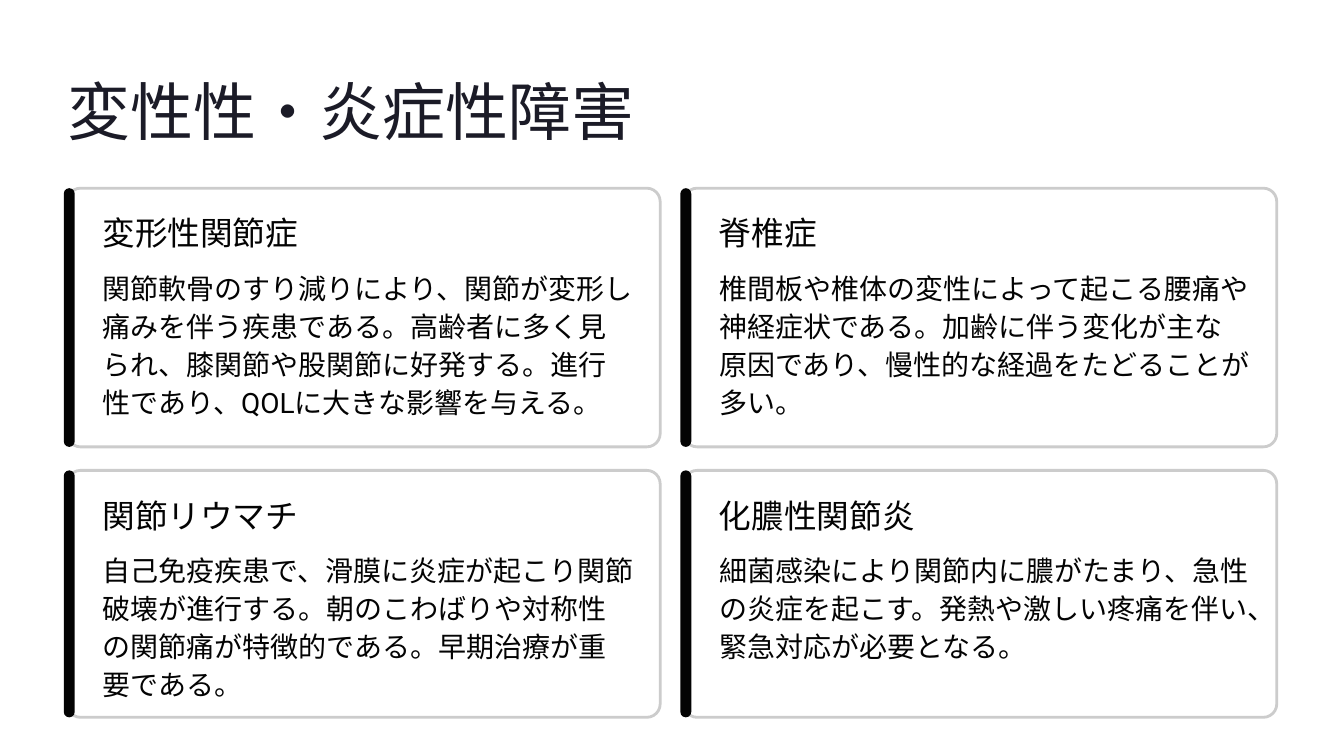
import pptx
import pptx.dml.color
import pptx.enum.shapes
import pptx.enum.text
import pptx.oxml.ns
import pptx.util
from lxml import etree

SHAPE = pptx.enum.shapes.MSO_SHAPE
PX = 9144  # EMU per px, 100 px to the inch
INK = "030303"

DISORDERS = [
    ("変形性関節症",
     "関節軟骨のすり減りにより、関節が変形し痛みを伴う疾患である。高齢者に多く見られ、"
     "膝関節や股関節に好発する。進行性であり、QOLに大きな影響を与える。"),
    ("脊椎症",
     "椎間板や椎体の変性によって起こる腰痛や神経症状である。加齢に伴う変化が主な原因であり、"
     "慢性的な経過をたどることが多い。"),
    ("関節リウマチ",
     "自己免疫疾患で、滑膜に炎症が起こり関節破壊が進行する。朝のこわばりや対称性の関節痛が"
     "特徴的である。早期治療が重要である。"),
    ("化膿性関節炎",
     "細菌感染により関節内に膿がたまり、急性の炎症を起こす。発熱や激しい疼痛を伴い、"
     "緊急対応が必要となる。"),
]
COLUMN_LEFTS = (80, 814)
ROWS = ((224, 308), (560, 294))  # top and height
CARD_WIDTH = 706


def rgb(hex_colour):
    return pptx.dml.color.RGBColor.from_string(hex_colour)


def px(*lengths):
    return [pptx.util.Emu(length * PX) for length in lengths]


class DisorderSlide:
    def __init__(self, deck):
        self.slide = deck.slides.add_slide(deck.slide_layouts[5])

    def set_text(self, frame, words, font, size, leading, colour=INK):
        """Fill a text frame with one left-aligned paragraph."""
        frame.margin_left = frame.margin_right = 0
        frame.margin_top = frame.margin_bottom = 0
        frame.word_wrap = True
        frame.auto_size = pptx.enum.text.MSO_AUTO_SIZE.NONE
        frame.vertical_anchor = pptx.enum.text.MSO_ANCHOR.TOP
        frame.text = words
        paragraph = frame.paragraphs[0]
        paragraph.alignment = pptx.enum.text.PP_ALIGN.LEFT
        paragraph.line_spacing = pptx.util.Pt(leading)
        paragraph.font.name = font
        paragraph.font.size = pptx.util.Pt(size)
        paragraph.font.color.rgb = rgb(colour)

    def title(self, words, left, top, width, height):
        heading = self.slide.shapes.title
        heading.left, heading.top, heading.width, heading.height = px(left, top, width, height)
        self.set_text(heading.text_frame, words, "Inter", 54, 64, "1B1B27")

    def text(self, words, left, top, width, height, font, size, leading):
        box = self.slide.shapes.add_textbox(*px(left, top, width, height))
        self.set_text(box.text_frame, words, font, size, leading)

    def rounded(self, left, top, width, height, radius, fill, border=None):
        panel = self.slide.shapes.add_shape(SHAPE.ROUNDED_RECTANGLE, *px(left, top, width, height))
        panel.shadow.inherit = False
        panel.adjustments[0] = min(0.5, radius / min(width, height))
        panel.fill.solid()
        panel.fill.fore_color.rgb = rgb(fill)
        if border:
            panel.line.color.rgb = rgb(border)
            panel.line.width = pptx.util.Pt(2.4)
        else:
            panel.line.fill.background()
        return panel

    def card(self, name, description, left, top, height):
        panel = self.rounded(left, top, CARD_WIDTH, height, 16, "FFFFFF", "CCCCCC")
        fill_colour = panel.element.spPr.find(".//" + pptx.oxml.ns.qn("a:srgbClr"))
        etree.SubElement(fill_colour, pptx.oxml.ns.qn("a:alpha"), val="95000")
        self.rounded(left - 4, top, 13, height, 12, INK)
        self.text(name, left + 42, top + 32, 356, 50, "Inter", 28, 32)
        self.text(description, left + 42, top + 94, 632, 182, "Roboto", 24, 32.5)


def main():
    deck = pptx.Presentation()
    deck.slide_width, deck.slide_height = px(1600, 900)
    page = DisorderSlide(deck)
    page.title("変性性・炎症性障害", 80, 88, 712, 89)
    for index, (name, description) in enumerate(DISORDERS):
        row, column = divmod(index, len(COLUMN_LEFTS))
        top, height = ROWS[row]
        page.card(name, description, COLUMN_LEFTS[column], top, height)
    deck.save("out.pptx")


if __name__ == "__main__":
    main()
